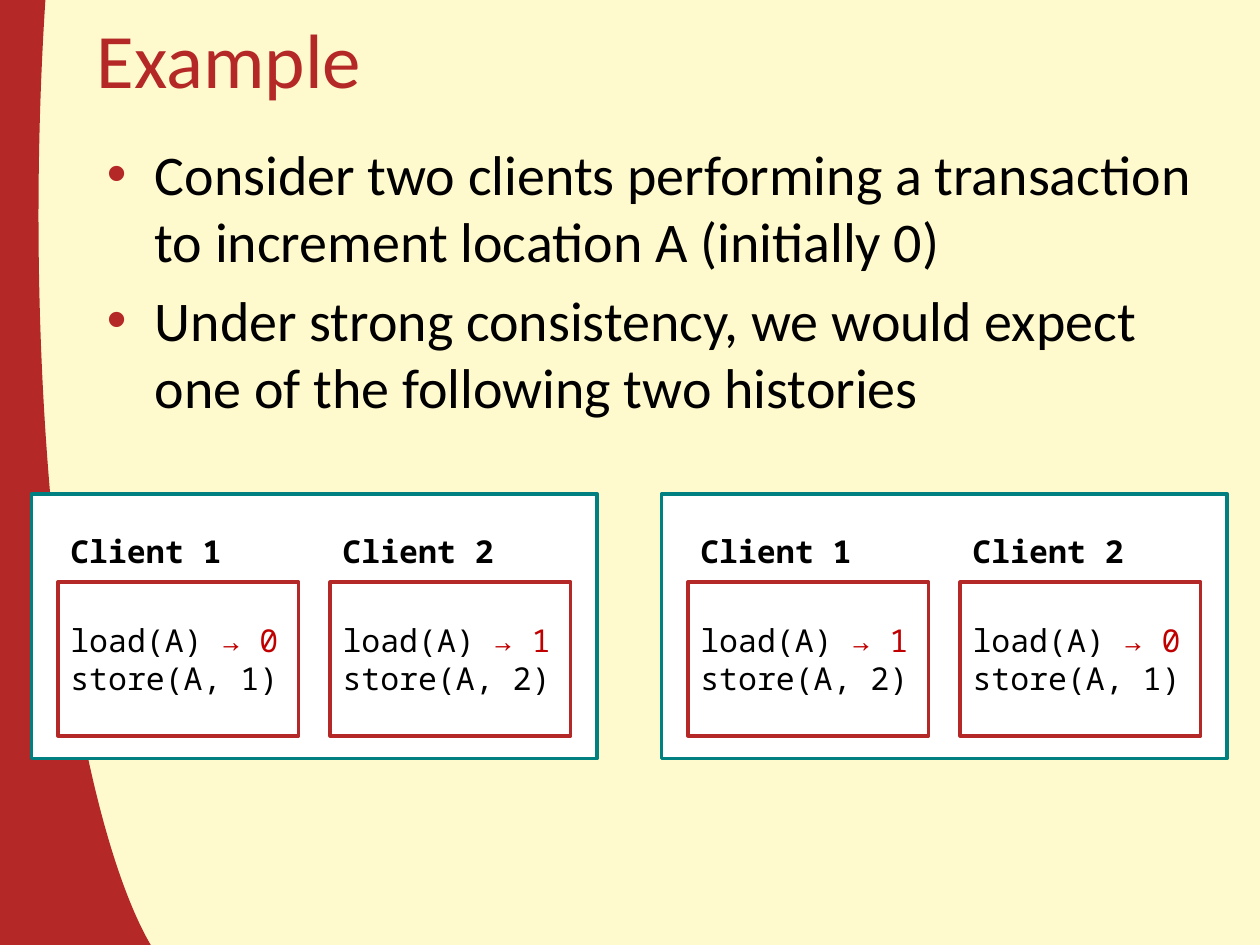
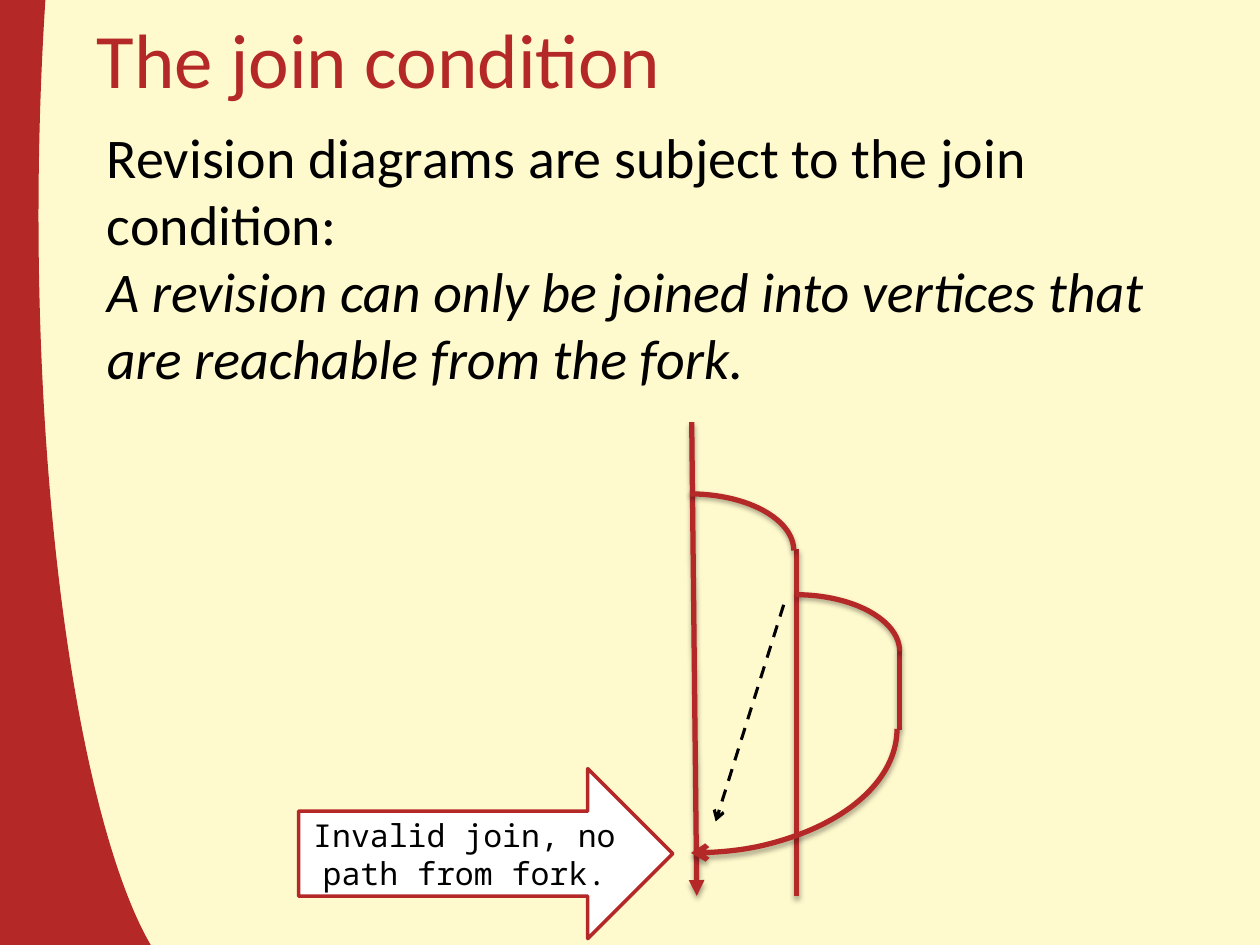
from dataclasses import dataclass

import pptx
import pptx.dml.color
import pptx.enum.dml
import pptx.enum.shapes
import pptx.enum.text
import pptx.oxml
import pptx.oxml.ns
import pptx.util

Inches = pptx.util.Inches
Pt = pptx.util.Pt
Shapes = pptx.enum.shapes.MSO_SHAPE
Anchor = pptx.enum.text.MSO_ANCHOR


@dataclass(frozen=True)
class Theme:
    cream: str = "FFFACD"
    red: str = "B42828"
    result_red: str = "C00000"
    teal: str = "008080"
    white: str = "FFFFFF"
    black: str = "000000"
    prose: str = "Calibri"
    code: str = "Noto Sans Mono"
    title_size: float = 44
    body_size: float = 32
    code_size: float = 18
    band_width: float = 80
    box_line: float = 2
    revision_line: float = 3
    path_line: float = 1.75


THEME = Theme()


def rgb(value):
    return pptx.dml.color.RGBColor.from_string(value)


def append_xml(parent, tag, **attributes):
    child = pptx.oxml.parse_xml(f"<a:{tag} {pptx.oxml.ns.nsdecls('a')}/>")
    for name, value in attributes.items():
        child.set(name, str(value))
    parent.append(child)
    return child


def style_line(item, color, width, shadow=False, head=None, tail=None):
    """Set outline, arrowheads and shadow of a shape or connector."""
    item.line.color.rgb = rgb(color)
    item.line.width = Pt(width)
    outline = item.line._get_or_add_ln()
    for tag, arrowhead in (("headEnd", head), ("tailEnd", tail)):
        if arrowhead:
            append_xml(outline, tag, type=arrowhead)
    effects = append_xml(item._element.spPr, "effectLst")
    if shadow:
        outer = append_xml(effects, "outerShdw", blurRad=Pt(3.1), dist=Pt(1.8),
                           dir=90 * 60000, rotWithShape=0)
        tint = append_xml(outer, "srgbClr", val=THEME.black)
        append_xml(tint, "alpha", val=35000)


def style_runs(paragraph, font, size, color=THEME.black, bold=False):
    for run in paragraph.runs:
        run.font.name = font
        run.font.size = Pt(size)
        run.font.color.rgb = rgb(color)
        run.font.bold = bold


def add_shape(slide, kind, box, color, width, fill=None, **line_options):
    shape = slide.shapes.add_shape(kind, *map(Inches, box))
    if fill:
        shape.fill.solid()
        shape.fill.fore_color.rgb = rgb(fill)
    else:
        shape.fill.background()
    style_line(shape, color, width, **line_options)
    return shape


def add_arc(slide, box, width, flip=None, **line_options):
    arc = add_shape(slide, Shapes.ARC, box, THEME.red, width, **line_options)
    if flip:
        arc._element.spPr.xfrm.set(flip, "1")
    return arc


def add_line(slide, start, end, color=THEME.red, width=THEME.revision_line, **line_options):
    line = slide.shapes.add_connector(
        pptx.enum.shapes.MSO_CONNECTOR.STRAIGHT, *map(Inches, start + end))
    style_line(line, color, width, **line_options)
    return line


def add_text(slide, box, text, anchor=Anchor.TOP):
    frame = slide.shapes.add_textbox(*map(Inches, box)).text_frame
    frame.word_wrap = True
    frame.vertical_anchor = anchor
    frame.text = text
    return frame


def add_body(slide, box, text):
    frame = add_text(slide, box, text)
    for paragraph in frame.paragraphs:
        paragraph.space_before = Pt(THEME.body_size * 0.2)
        style_runs(paragraph, THEME.prose, THEME.body_size)
    return frame


def add_bullet(paragraph):
    properties = paragraph._p.get_or_add_pPr()
    properties.set("marL", str(Inches(0.38)))
    properties.set("indent", str(Inches(-0.38)))
    bullet_color = append_xml(properties, "buClr")
    append_xml(bullet_color, "srgbClr", val=THEME.red)
    append_xml(properties, "buFont", typeface="Arial")
    append_xml(properties, "buChar", char="•")


def start_slide(deck, title):
    """Add a slide with the shared background, curved band and title."""
    slide = deck.slides.add_slide(deck.slide_layouts[6])
    slide.background.fill.solid()
    slide.background.fill.fore_color.rgb = rgb(THEME.cream)
    band = add_arc(slide, (-0.25, -4.83, 3.08, 13.08), THEME.band_width, flip="flipH")
    band.adjustments[0] = 177.66
    band.adjustments[1] = 55.34
    heading = add_text(slide, (0.67, -0.17, 9, 1.25), title, Anchor.MIDDLE)
    style_runs(heading.paragraphs[0], THEME.prose, THEME.title_size, THEME.red)
    return slide


def add_transaction(slide, left, client, loaded, stored):
    label = add_text(slide, (left, 4, 1.93, 0.74), client, Anchor.MIDDLE)
    style_runs(label.paragraphs[0], THEME.code, THEME.code_size, bold=True)
    box = add_shape(slide, Shapes.RECTANGLE, (left, 4.62, 1.91, 1.22),
                    THEME.red, THEME.box_line, THEME.white)
    frame = box.text_frame
    frame.vertical_anchor = Anchor.MIDDLE
    frame.text = f"load(A) \nstore(A, {stored})"
    load = frame.paragraphs[0]
    load.add_run().text = f"→ {loaded}"
    for paragraph in frame.paragraphs:
        paragraph.alignment = pptx.enum.text.PP_ALIGN.LEFT
        style_runs(paragraph, THEME.code, THEME.code_size)
    load.runs[1].font.color.rgb = rgb(THEME.result_red)


def add_history(slide, left, transactions):
    add_shape(slide, Shapes.RECTANGLE, (left, 3.92, 4.49, 2.1),
              THEME.teal, THEME.box_line, THEME.white)
    for index, (loaded, stored) in enumerate(transactions):
        add_transaction(slide, left + 0.21 + 2.16 * index,
                        f"Client {index + 1}", loaded, stored)


def build_example(deck):
    slide = start_slide(deck, "Example")
    body = add_body(
        slide, (0.75, 1.06, 9, 6.09),
        "Consider two clients performing a transaction to increment location A (initially 0)\n"
        "Under strong consistency, we would expect one of the following two histories")
    for paragraph in body.paragraphs:
        add_bullet(paragraph)
    add_history(slide, 0.25, [(0, 1), (1, 2)])
    add_history(slide, 5.25, [(1, 2), (0, 1)])


def add_revision_diagram(slide):
    main_x, fork_x, inner_x = 5.49, 6.32, 7.14
    end_y = 7.11
    add_line(slide, (main_x, 3.35), (5.53, end_y), shadow=True, tail="triangle")
    add_line(slide, (fork_x, 4.36), (fork_x, end_y), shadow=True)
    add_line(slide, (inner_x, 5.17), (inner_x, 5.79), shadow=True)
    for fork_box in ((4.65, 3.92, 1.65, 0.9), (5.49, 4.72, 1.65, 0.9)):
        add_arc(slide, fork_box, THEME.revision_line, shadow=True)
    add_arc(slide, (3.85, 4.8, 3.27, 1.97), THEME.revision_line,
            flip="flipV", shadow=True, head="arrow")
    missing_path = add_line(slide, (6.22, 4.8), (5.68, 6.52), THEME.black,
                            THEME.path_line, tail="arrow")
    missing_path.line.dash_style = pptx.enum.dml.MSO_LINE.DASH


def build_join_condition(deck):
    slide = start_slide(deck, "The join condition")
    body = add_body(
        slide, (0.75, 0.92, 9, 2.5),
        "Revision diagrams are subject to the join condition:\v"
        "A revision can only be joined into vertices that are reachable from the fork.")
    body.paragraphs[0].runs[1].font.italic = True
    add_revision_diagram(slide)
    callout = add_shape(slide, Shapes.RIGHT_ARROW, (2.37, 6.1, 2.97, 1.35),
                        THEME.red, THEME.box_line, THEME.white)
    callout.text_frame.word_wrap = True
    callout.text_frame.vertical_anchor = Anchor.MIDDLE
    callout.text_frame.text = "Invalid join, no path from fork."
    message = callout.text_frame.paragraphs[0]
    message.alignment = pptx.enum.text.PP_ALIGN.CENTER
    style_runs(message, THEME.code, THEME.code_size)


def main():
    deck = pptx.Presentation()
    deck.slide_width = Inches(10)
    deck.slide_height = Inches(7.5)
    build_example(deck)
    build_join_condition(deck)
    deck.save("out.pptx")


if __name__ == "__main__":
    main()
